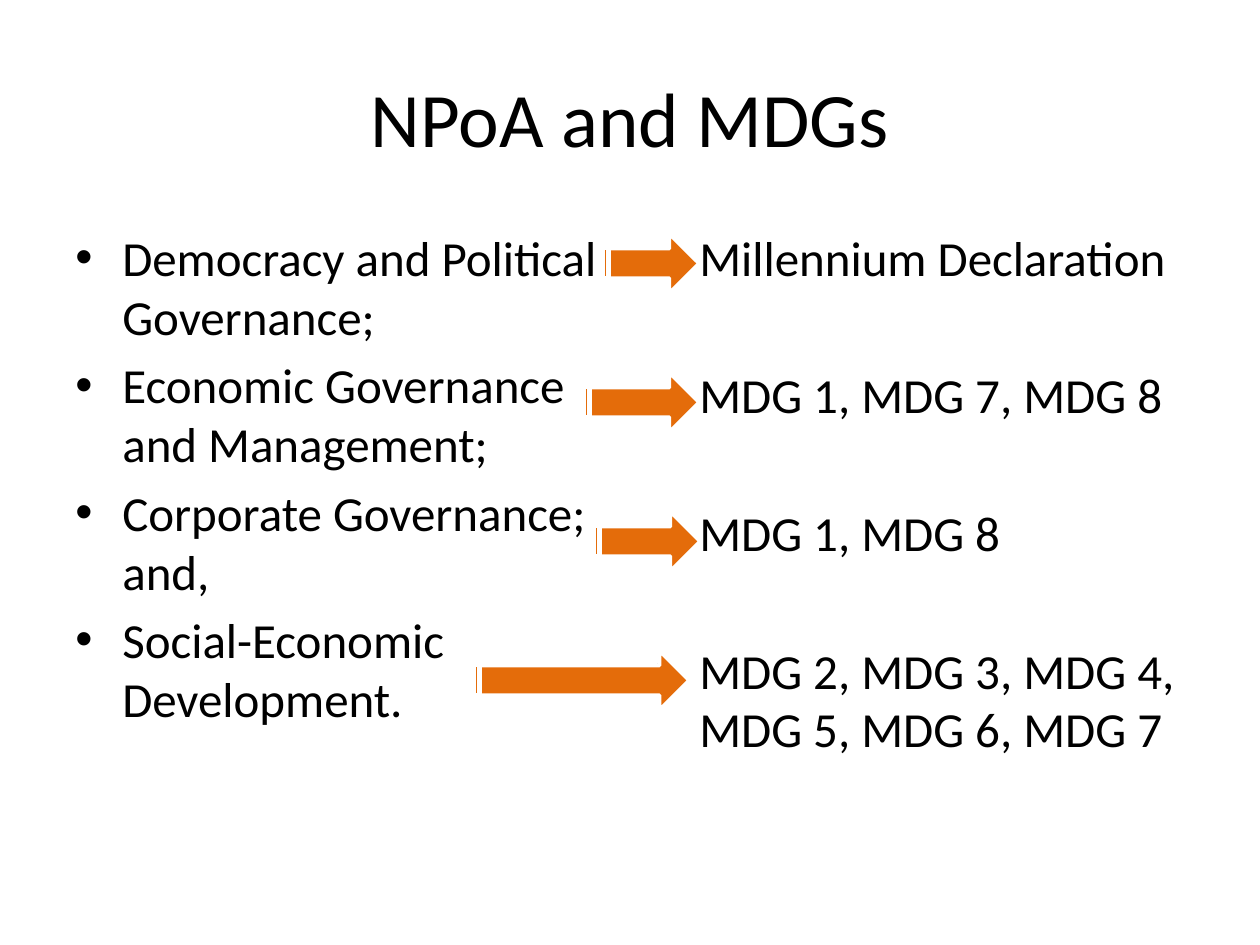
from pptx import Presentation
from pptx.dml.color import RGBColor
from pptx.enum.shapes import MSO_SHAPE as Shape
from pptx.enum.text import MSO_ANCHOR as Anchor, PP_ALIGN as Align
from pptx.oxml import parse_xml
from pptx.oxml.ns import nsdecls
from pptx.util import Pt

# Content
TITLE = "NPoA and MDGs"
THEMES = [
    "Democracy and Political Governance;",
    "Economic Governance and Management;",
    "Corporate Governance; and,",
    "Social-Economic Development.",
]
GOALS = [
    "Millennium Declaration",
    "MDG 1, MDG 7, MDG 8",
    "MDG 1, MDG 8",
    "MDG 2, MDG 3, MDG 4, MDG 5, MDG 6, MDG 7",
]
ARROW_SPANS = [(600, 699), (581, 699), (591, 700), (471, 689)]  # left, right

# Style
BLACK = RGBColor(0x00, 0x00, 0x00)
WHITE = RGBColor(0xFF, 0xFF, 0xFF)
ORANGE = RGBColor(0xE4, 0x6C, 0x0A)
FONT = "Calibri"
BODY_SIZE = 28
BODY_GAP = 5.6   # points, a fifth of the text size
GOAL_GAP = 45    # points, leaves a free line between goals

# Geometry in px, 126 to the inch
SCALE = 914400 / 126
MARGIN, COLUMN_WIDTH, GOAL_LEFT = 63, 557, 640
BODY_TOP, BODY_HEIGHT = 221, 624
BULLET_INDENT = 47
ARROW_TOP, ARROW_PITCH, ARROW_HEIGHT = 234, 139, 59


def emu(px):
    return round(px * SCALE)


def add_text(slide, bounds, lines, size):
    box = slide.shapes.add_textbox(*map(emu, bounds))
    frame = box.text_frame
    frame.word_wrap = True
    frame.text = "\n".join(lines)
    for para in frame.paragraphs:
        for span in para.runs:
            span.font.name = FONT
            span.font.size = Pt(size)
            span.font.color.rgb = BLACK
    return frame


def add_bullets(slide, left, lines, gap):
    bounds = (left, BODY_TOP, COLUMN_WIDTH, BODY_HEIGHT)
    frame = add_text(slide, bounds, lines, BODY_SIZE)
    for index, para in enumerate(frame.paragraphs):
        para.space_before = Pt(gap if index else BODY_GAP)
        props = para._p.get_or_add_pPr()
        props.set("marL", str(emu(BULLET_INDENT)))
        props.set("indent", str(-emu(BULLET_INDENT)))
        props.append(parse_xml(f'<a:buFont {nsdecls("a")} typeface="Arial"/>'))
        props.append(parse_xml(f'<a:buChar {nsdecls("a")} char="•"/>'))


def add_arrow(slide, left, right, top):
    bounds = (left, top, right - left, ARROW_HEIGHT)
    arrow = slide.shapes.add_shape(Shape.STRIPED_RIGHT_ARROW, *map(emu, bounds))
    arrow.shadow.inherit = False
    arrow.fill.solid()
    arrow.fill.fore_color.rgb = ORANGE
    arrow.line.color.rgb = WHITE
    arrow.line.width = Pt(2)


def main():
    deck = Presentation()
    deck.slide_width, deck.slide_height = emu(1260), emu(945)
    page = deck.slides.add_slide(deck.slide_layouts[6])

    # Title
    heading = add_text(page, (MARGIN, 38, 1134, 157), [TITLE], 44)
    heading.vertical_anchor = Anchor.MIDDLE
    heading.paragraphs[0].alignment = Align.CENTER

    # Themes and the goals they lead to
    add_bullets(page, MARGIN, THEMES, BODY_GAP)
    add_bullets(page, GOAL_LEFT, GOALS, GOAL_GAP)

    # Arrows from theme to goal
    for row, (left, right) in enumerate(ARROW_SPANS):
        add_arrow(page, left, right, ARROW_TOP + row * ARROW_PITCH)

    deck.save("out.pptx")


if __name__ == "__main__":
    main()
